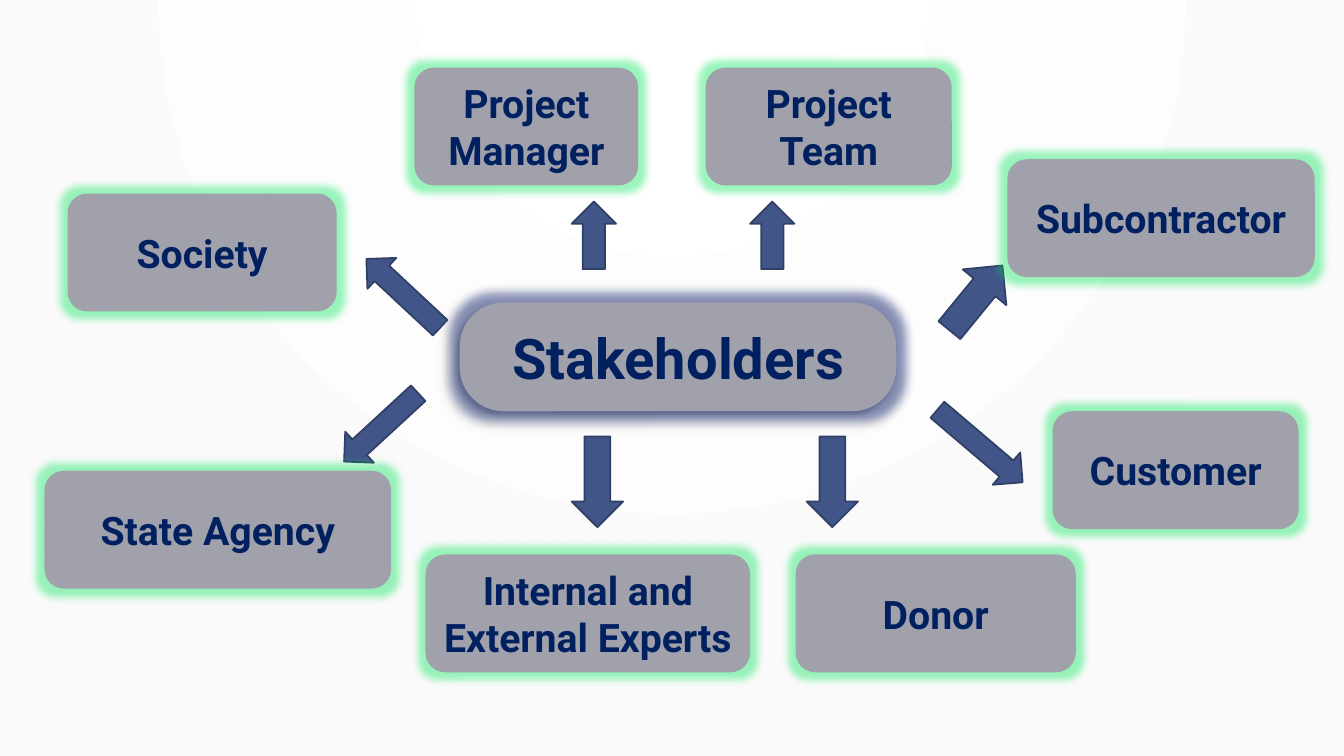
from lxml.etree import SubElement
from pptx import Presentation
from pptx.dml.color import RGBColor
from pptx.enum.shapes import MSO_SHAPE
from pptx.enum.text import MSO_ANCHOR, PP_ALIGN
from pptx.oxml.ns import qn
from pptx.util import Inches, Pt

COLORS = {
    "center": "FFFFFF",
    "edge": "FAFAFA",
    "card": "A1A1AC",
    "text": "002060",
    "arrow": "415588",
    "arrow_line": "303F65",
    "card_glow": "00E657",
    "hub_glow": "0A1E7A",
    "shadow": "000000",
}
HUB = (4.56, 3, 4.33, 1.08)
CARD_HEIGHT = 1.17
STAKEHOLDERS = [
    ("Project Manager", 4.11, 0.67, 2.22),
    ("Customer", 10.44, 4.08, 2.44),
    ("Subcontractor", 9.99, 1.58, 3.05),
    ("Project Team", 7, 0.67, 2.44),
    ("Donor", 7.89, 5.5, 2.78),
    ("Internal and External Experts", 4.22, 5.5, 3.22),
    ("State Agency", 0.44, 4.67, 3.44),
    ("Society", 0.67, 1.92, 2.67),
]
ARROWS = [
    ((3.79, 2.41, 0.42, 1), 313),
    ((5.67, 2, 0.44, 0.67), 0),
    ((7.44, 2, 0.44, 0.67), 0),
    ((9.4, 2.54, 0.56, 0.83), 39.3),
    ((3.57, 3.74, 0.42, 1), 227.3),
    ((9.51, 3.87, 0.42, 1.11), 130.4),
    ((5.67, 4.33, 0.51, 0.9), 180),
    ((8, 4.33, 0.51, 0.9), 180),
]


def rgb(name):
    """Return the named colour."""
    return RGBColor.from_string(COLORS[name])


def paint_background(slide):
    """Fill the slide with a circular gradient centred on its top edge."""
    fill = slide.background.fill
    fill.gradient()
    for stop, name in zip(fill.gradient_stops, ("center", "edge")):
        stop.color.rgb = rgb(name)
    gradient = slide.background._cSld.find(".//" + qn("a:gradFill"))
    gradient.remove(gradient.find(qn("a:lin")))
    circle = SubElement(gradient, qn("a:path"), path="circle")
    SubElement(circle, qn("a:fillToRect"), l="43000", t="0", r="43000", b="100000")


def add_effect(shape, kind, color, **settings):
    """Append a 40% opaque glow or shadow to the shape."""
    effects = shape._element.spPr.find(qn("a:effectLst"))
    effect = SubElement(effects, qn("a:" + kind), **settings)
    tint = SubElement(effect, qn("a:srgbClr"), val=COLORS[color])
    SubElement(tint, qn("a:alpha"), val="40000")


def add_filled(slide, preset, box, color):
    """Add a flat preset shape in the given box."""
    shape = slide.shapes.add_shape(preset, *map(Inches, box))
    shape.shadow.inherit = False
    shape.fill.solid()
    shape.fill.fore_color.rgb = rgb(color)
    return shape


def write_text(shape, text, size, color="text", bold=True, font="Roboto"):
    """Write centred text into the shape."""
    frame = shape.text_frame
    frame.word_wrap = True
    frame.vertical_anchor = MSO_ANCHOR.MIDDLE
    paragraph = frame.paragraphs[0]
    paragraph.alignment = PP_ALIGN.CENTER
    run = paragraph.add_run()
    run.text = text
    run.font.name = font
    run.font.size = Pt(size)
    run.font.bold = bold
    run.font.color.rgb = rgb(color)


def add_card(slide, box, text, size, glow, radius):
    """Add a glowing rounded card with its label."""
    card = add_filled(slide, MSO_SHAPE.ROUNDED_RECTANGLE, box, "card")
    card.line.fill.background()
    add_effect(card, "glow", glow, rad=str(Pt(radius)))
    write_text(card, text, size)
    return card


def add_hub(slide, box):
    """Add the central card with its drop shadow."""
    hub = add_card(slide, box, "Stakeholders", 40, "hub_glow", 14)
    hub.adjustments[0] = 0.404
    add_effect(hub, "outerShdw", "shadow", blurRad=str(Pt(4)), dist=str(Pt(3)),
               dir=str(135 * 60000), algn="tr", rotWithShape="0")


def add_arrow(slide, box, angle):
    """Add a block arrow turned clockwise from upright."""
    arrow = add_filled(slide, MSO_SHAPE.UP_ARROW, box, "arrow")
    arrow.line.color.rgb = rgb("arrow_line")
    arrow.line.width = Pt(1.25)
    arrow.rotation = angle


def main():
    """Build and save the stakeholder map."""
    deck = Presentation()
    deck.slide_width, deck.slide_height = Inches(13.33), Inches(7.5)
    slide = deck.slides.add_slide(deck.slide_layouts[6])
    paint_background(slide)
    add_hub(slide, HUB)
    for box, angle in ARROWS:
        add_arrow(slide, box, angle)
    for name, left, top, width in STAKEHOLDERS:
        add_card(slide, (left, top, width, CARD_HEIGHT), name, 28, "card_glow", 11)
    deck.save("out.pptx")


if __name__ == "__main__":
    main()
